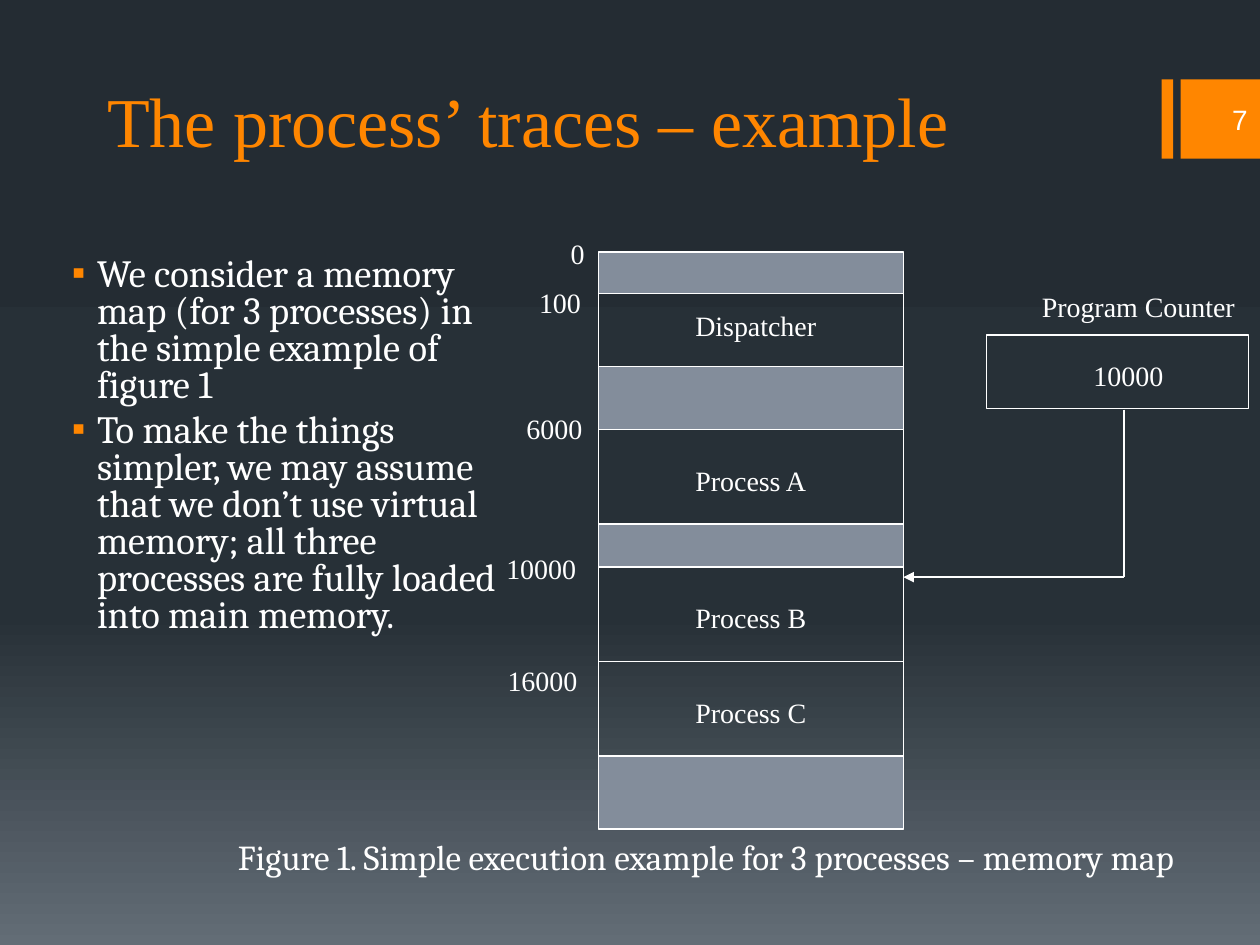
from copy import deepcopy

from lxml import etree
from pptx import Presentation
from pptx.dml.color import RGBColor
from pptx.enum.shapes import MSO_CONNECTOR, MSO_SHAPE
from pptx.enum.text import MSO_ANCHOR, MSO_AUTO_SIZE, PP_ALIGN
from pptx.oxml.ns import qn
from pptx.util import Inches, Pt

RECTANGLE = MSO_SHAPE.RECTANGLE
STRAIGHT = MSO_CONNECTOR.STRAIGHT
TOP, MIDDLE, BOTTOM = MSO_ANCHOR.TOP, MSO_ANCHOR.MIDDLE, MSO_ANCHOR.BOTTOM
LEFT, RIGHT = PP_ALIGN.LEFT, PP_ALIGN.RIGHT
NO_AUTOFIT = MSO_AUTO_SIZE.NONE

ORANGE = RGBColor(0xFF, 0x86, 0x00)
WHITE = RGBColor(0xFF, 0xFF, 0xFF)
GREY = RGBColor(0x83, 0x8D, 0x9B)
BACKGROUND = [
    (0, RGBColor(0x24, 0x2C, 0x33)),
    (0.65, RGBColor(0x27, 0x30, 0x37)),
    (1, RGBColor(0x63, 0x6D, 0x76)),
]
SERIF = "Times New Roman"


def add_span(para, text, size, font=SERIF, color=WHITE):
    span = para.add_run()
    span.text = text
    span.font.size = Pt(size)
    span.font.name = font
    span.font.color.rgb = color


def add_box(left, top, width, height, fill=None, line=WHITE):
    box = page.shapes.add_shape(
        RECTANGLE, Inches(left), Inches(top), Inches(width), Inches(height)
    )
    box.shadow.inherit = False
    if fill is None:
        box.fill.background()
    else:
        box.fill.solid()
        box.fill.fore_color.rgb = fill
    if line is None:
        box.line.fill.background()
    else:
        box.line.color.rgb = line
        box.line.width = Pt(0.75)


deck = Presentation()
deck.slide_width = Inches(10)
deck.slide_height = Inches(7.5)
page = deck.slides.add_slide(deck.slide_layouts[1])

backdrop = page.background.fill
backdrop.gradient()
backdrop.gradient_angle = 270
stop_list = page.element.find(".//" + qn("a:gsLst"))
stop_list.append(deepcopy(stop_list[-1]))
for stop, (position, color) in zip(backdrop.gradient_stops, BACKGROUND):
    stop.position = position
    stop.color.rgb = color

for left, width in [(9.22, 0.09), (9.37, 0.63)]:
    add_box(left, 0.63, width, 0.63, ORANGE, None)

title = page.shapes.title
title.left, title.top = Inches(0.75), Inches(0.08)
title.width, title.height = Inches(8.5), Inches(1.25)
title.text_frame.auto_size = NO_AUTOFIT
title.text_frame.vertical_anchor = BOTTOM
para = title.text_frame.paragraphs[0]
para.alignment = LEFT
add_span(para, "The process’ traces – example", 40, color=ORANGE)

body = page.placeholders[1]
body.left, body.top = Inches(0.42), Inches(2)
body.width, body.height = Inches(3.75), Inches(4.58)
body.text_frame.auto_size = NO_AUTOFIT
body.text_frame.vertical_anchor = TOP
points = [
    "We consider a memory map (for 3 processes) in the simple example of figure 1",
    "To make the things simpler, we may assume that we don’t use virtual memory; "
    "all three processes are fully loaded into main memory.",
]
for index, point in enumerate(points):
    para = body.text_frame.add_paragraph() if index else body.text_frame.paragraphs[0]
    para.line_spacing = 0.8
    para.space_before = Pt(4.4)
    add_span(para, point, 22, "Cambria")
    properties = para._p.get_or_add_pPr()
    properties.set("marL", str(Inches(0.25)))
    properties.set("indent", str(Inches(-0.2)))
    bullet_color = etree.SubElement(properties, qn("a:buClr"))
    etree.SubElement(bullet_color, qn("a:srgbClr")).set("val", str(ORANGE))
    etree.SubElement(properties, qn("a:buFont")).set("typeface", "Arial")
    etree.SubElement(properties, qn("a:buChar")).set("char", "▪")

number = page.shapes.add_textbox(Inches(7.67), Inches(0.75), Inches(2.33), Inches(0.4))
number.text_frame.word_wrap = True
number.text_frame.vertical_anchor = MIDDLE
para = number.text_frame.paragraphs[0]
para.alignment = RIGHT
add_span(para, "7", 16, "Arial")

top = 2
memory_blocks = [
    (0.33, GREY), (0.58, None), (0.5, GREY), (0.75, None),
    (0.34, GREY), (0.75, None), (0.75, None), (0.58, GREY),
]
for height, fill in memory_blocks:
    add_box(4.75, top, 2.42, height, fill)
    top += height

add_box(7.83, 2.66, 2.08, 0.58)

labels = [
    ("Dispatcher", 5.42, 2.4, 1.18),
    ("Process A", 5.42, 3.63, 1.09),
    ("Process B", 5.42, 4.72, 1.09),
    ("Process C", 5.42, 5.47, 1.09),
    ("Program Counter", 8.17, 2.25, 1.76),
    ("10000", 8.58, 2.8, 0.76),
    ("0", 4.43, 1.83, 0.31),
    ("100", 4.18, 2.22, 0.53),
    ("6000", 4.08, 3.22, 0.65),
    ("10000", 3.92, 4.33, 0.76),
    ("16000", 3.93, 5.22, 0.76),
]
for text, left, top, width in labels:
    label = page.shapes.add_textbox(
        Inches(left), Inches(top), Inches(width), Inches(0.37)
    )
    label.text_frame.word_wrap = False
    add_span(label.text_frame.paragraphs[0], text, 16)

caption = page.shapes.add_textbox(
    Inches(1.79), Inches(6.58), Inches(8.13), Inches(0.44)
)
caption.text_frame.word_wrap = False
add_span(
    caption.text_frame.paragraphs[0],
    "Figure 1. Simple execution example for 3 processes – memory map",
    20,
    "Cambria",
)

counter_path = [(8.92, 3.25), (8.92, 4.58), (7.17, 4.58)]
for (x1, y1), (x2, y2) in zip(counter_path, counter_path[1:]):
    pointer = page.shapes.add_connector(
        STRAIGHT, Inches(x1), Inches(y1), Inches(x2), Inches(y2)
    )
    pointer.line.color.rgb = WHITE
    pointer.line.width = Pt(0.75)
    etree.SubElement(pointer.element.spPr, qn("a:effectLst"))
arrowhead = etree.SubElement(pointer.line._get_or_add_ln(), qn("a:tailEnd"))
arrowhead.set("type", "triangle")

deck.save("out.pptx")
